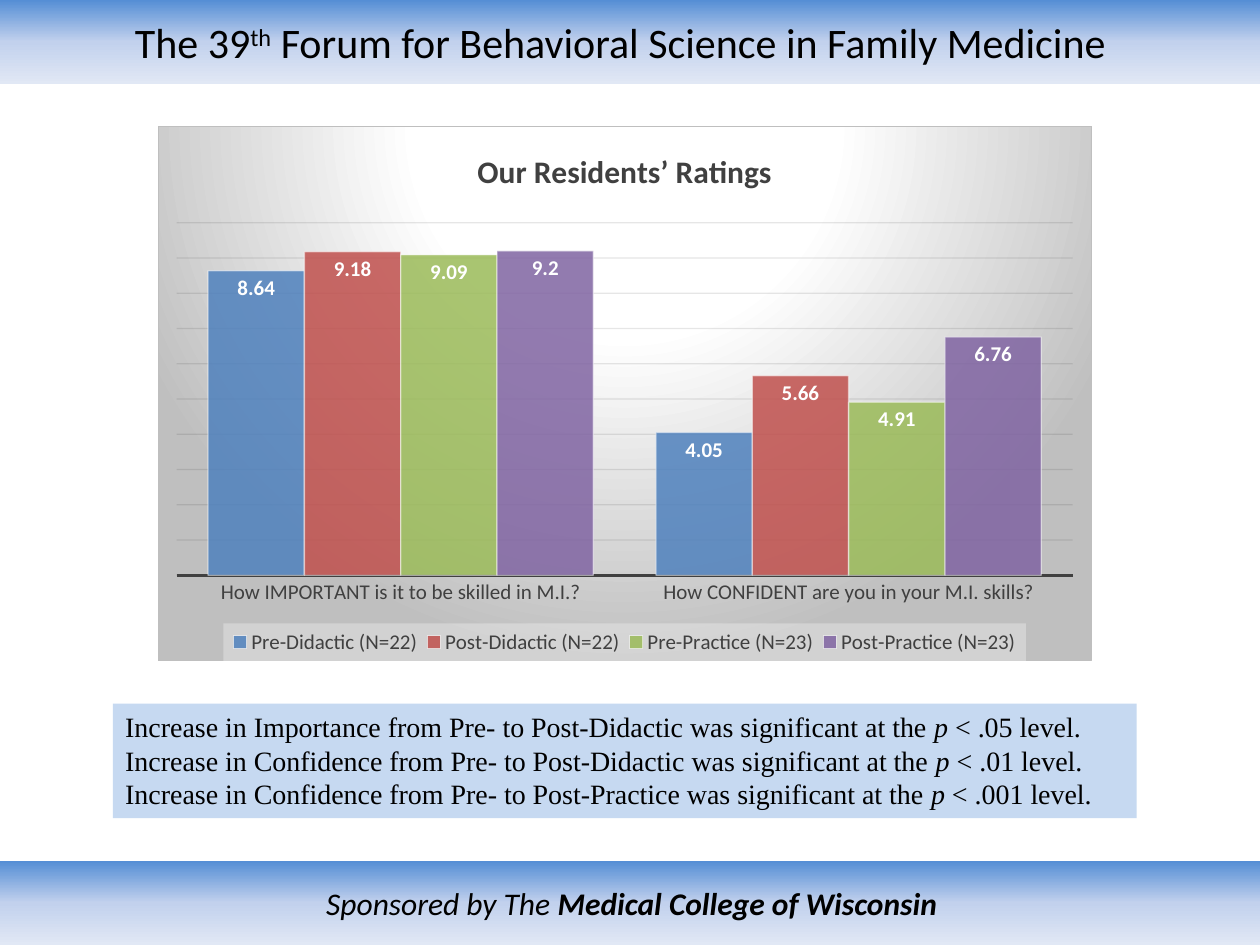
from lxml import etree
from pptx import Presentation
from pptx.chart.data import CategoryChartData as ChartData
from pptx.dml.color import RGBColor as RGB
from pptx.enum.chart import XL_CHART_TYPE as Kind, XL_LABEL_POSITION as Spot
from pptx.enum.chart import XL_LEGEND_POSITION as Side, XL_TICK_MARK as Tick
from pptx.enum.shapes import MSO_SHAPE as Form
from pptx.enum.text import MSO_ANCHOR as Anchor, MSO_AUTO_SIZE as Auto, PP_ALIGN as Align
from pptx.oxml import parse_xml
from pptx.oxml.ns import nsdecls, qn
from pptx.util import Pt


class Theme:
    sans, serif = "Calibri", "Times New Roman"
    head, foot, note, title, label = Pt(24), Pt(18), Pt(16), Pt(18), Pt(12)
    black, white, dark = RGB(0, 0, 0), RGB(255, 255, 255), RGB.from_string("404040")
    grid, pale = RGB.from_string("0D0D0D"), RGB.from_string("C6D9F1")
    band = [(0, "558ED5"), (50, "C2D1ED"), (100, "E1E8F5")]
    glow = [(0, "FFFFFF"), (39, "FFFFFF"), (100, "BFBFBF")]
    edge, key = "BFBFBF", "F2F2F2"
    bars = ["4F81BD", "C0504D", "9BBB59", "8064A2"]


def blend(stops, way):
    """Gradient fill XML; way is its direction element."""
    marks = "".join(f'<a:gs pos="{at * 1000}"><a:srgbClr val="{tint}"/></a:gs>'
                    for at, tint in stops)
    return f'<a:gradFill {nsdecls("a")} rotWithShape="1"><a:gsLst>{marks}</a:gsLst>{way}</a:gradFill>'


def fade(part, share):
    """Make every colour inside part opaque to share percent."""
    for tint in part.iter(qn("a:srgbClr")):
        etree.SubElement(tint, qn("a:alpha")).set("val", str(share * 1000))


deck = Presentation()
deck.slide_width, deck.slide_height = Pt(720), Pt(540)
slide = deck.slides.add_slide(deck.slide_layouts[5])
shapes = slide.shapes

# Header and footer bands
head = shapes.title
foot = shapes.add_shape(Form.RECTANGLE, Pt(0), Pt(492), Pt(722), Pt(48))
foot.shadow.inherit = False
head.left, head.top, head.width, head.height = Pt(0), Pt(0), Pt(720), Pt(48)
bands = [
    (head, Theme.head, ["The 39", "th", " Forum for Behavioral Science in Family Medicine"]),
    (foot, Theme.foot, ["Sponsored by The ", "Medical College of Wisconsin"]),
]
for band, size, words in bands:
    band.fill.gradient()
    old = band._element.spPr.find(qn("a:gradFill"))
    old.getparent().replace(old, parse_xml(blend(Theme.band, '<a:lin ang="5400000" scaled="0"/>')))
    band.line.fill.background()
    frame = band.text_frame
    frame.auto_size, frame.word_wrap = Auto.NONE, True
    frame.vertical_anchor = Anchor.MIDDLE
    para = frame.paragraphs[0]
    para.alignment = Align.CENTER
    for word in words:
        para.add_run().text = word
    font = para.font
    font.name, font.size, font.color.rgb = Theme.sans, size, Theme.black
head.text_frame.margin_right = Pt(18)
head.text_frame.paragraphs[0].runs[1]._r.get_or_add_rPr().set("baseline", "30000")
line = foot.text_frame.paragraphs[0]
line.font.italic = True
line.runs[1].font.bold = True

# Ratings chart
data = ChartData()
data.categories = ["How IMPORTANT is it to be skilled in M.I.?",
                   "How CONFIDENT are you in your M.I. skills?"]
for name, scores in [
    ("Pre-Didactic (N=22)", (8.64, 4.05)),
    ("Post-Didactic (N=22)", (9.18, 5.66)),
    ("Pre-Practice (N=23)", (9.09, 4.91)),
    ("Post-Practice (N=23)", (9.2, 6.76)),
]:
    data.add_series(name, scores)
chart = shapes.add_chart(Kind.COLUMN_CLUSTERED, Pt(90), Pt(72), Pt(534), Pt(306), data).chart
chart.font.name, chart.font.size, chart.font.color.rgb = Theme.sans, Theme.label, Theme.dark

chart.has_title = True
para = chart.chart_title.text_frame.paragraphs[0]
para.text = "Our Residents’ Ratings"
font = para.font
font.name, font.size, font.bold, font.color.rgb = Theme.sans, Theme.title, True, Theme.dark
chart.chart_title.include_in_layout = False

cats, vals = chart.category_axis, chart.value_axis
cats.major_tick_mark = cats.minor_tick_mark = Tick.NONE
cats.format.line.width = Pt(1.5)
cats.format.line.color.rgb = Theme.dark
vals.minimum_scale, vals.maximum_scale, vals.major_unit = 0, 10, 1
rule = vals.major_gridlines.format.line
rule.width, rule.color.rgb = Pt(0.75), Theme.grid
fade(vals.major_gridlines._xAx.find(qn("c:majorGridlines")), 10)
vals.visible = False

plot = chart.plots[0]
plot.gap_width, plot.overlap, plot.vary_by_categories = 65, 0, False
for bar, tint in zip(plot.series, Theme.bars):
    look = bar.format
    look.fill.solid()
    look.fill.fore_color.rgb = RGB.from_string(tint)
    look.line.width, look.line.color.rgb = Pt(0.75), Theme.white
    shape = bar._element.find(qn("c:spPr"))
    fade(shape.find(qn("a:solidFill")), 85)
    fade(shape.find(qn("a:ln")), 50)
    tags = bar.data_labels
    tags.show_value, tags.position = True, Spot.INSIDE_END
    font = tags.font
    font.name, font.size, font.bold, font.color.rgb = Theme.sans, Theme.label, True, Theme.white

chart.has_legend = True
legend = chart.legend
legend.position, legend.include_in_layout = Side.BOTTOM, False
font = legend.font
font.name, font.size, font.color.rgb = Theme.sans, Theme.label, Theme.dark
key = parse_xml(f'<c:spPr {nsdecls("c", "a")}><a:solidFill><a:srgbClr val="{Theme.key}"/>'
                '</a:solidFill></c:spPr>')
fade(key, 39)
legend._element.find(qn("c:txPr")).addprevious(key)

# Fixed places of the plot and the legend, as shares of the chart
space = chart._chartSpace
area = space.chart.plotArea
for part, inner, spots in [
    (area, '<c:layoutTarget val="inner"/>', (0.02, 0.18, 0.96, 0.66)),
    (legend._element, "", (0.07, 0.93, 0.86, 0.07)),
]:
    modes = '<c:xMode val="edge"/><c:yMode val="edge"/>'
    sizes = "".join(f'<c:{side} val="{spot}"/>' for side, spot in zip("xywh", spots))
    for old in part.findall(qn("c:layout")):
        part.remove(old)
    place = parse_xml(f'<c:layout {nsdecls("c")}><c:manualLayout>{inner}{modes}{sizes}'
                      '</c:manualLayout></c:layout>')
    part.insert(0 if part is area else 1, place)

glow = blend(Theme.glow, '<a:path path="circle"><a:fillToRect l="50000" t="-80000" '
                         'r="50000" b="180000"/></a:path>')
space.chart.addnext(parse_xml(
    f'<c:spPr {nsdecls("c", "a")}>{glow}<a:ln w="9525"><a:solidFill>'
    f'<a:srgbClr val="{Theme.edge}"/></a:solidFill></a:ln></c:spPr>'))

# Significance notes
note = shapes.add_textbox(Pt(64.5), Pt(402), Pt(585), Pt(65.5))
note.fill.solid()
note.fill.fore_color.rgb = Theme.pale
frame = note.text_frame
frame.word_wrap, frame.auto_size = True, Auto.SHAPE_TO_FIT_TEXT
for row, (topic, stage, level) in enumerate([
    ("Importance", "Didactic", ".05"),
    ("Confidence", "Didactic", ".01"),
    ("Confidence", "Practice", ".001"),
]):
    para = frame.add_paragraph() if row else frame.paragraphs[0]
    for word in (f"Increase in {topic} from Pre- to Post-{stage} was significant at the ",
                 "p", f" < {level} level."):
        para.add_run().text = word
    para.runs[1].font.italic = True
    font = para.font
    font.name, font.size, font.color.rgb = Theme.serif, Theme.note, Theme.black

deck.save("out.pptx")
